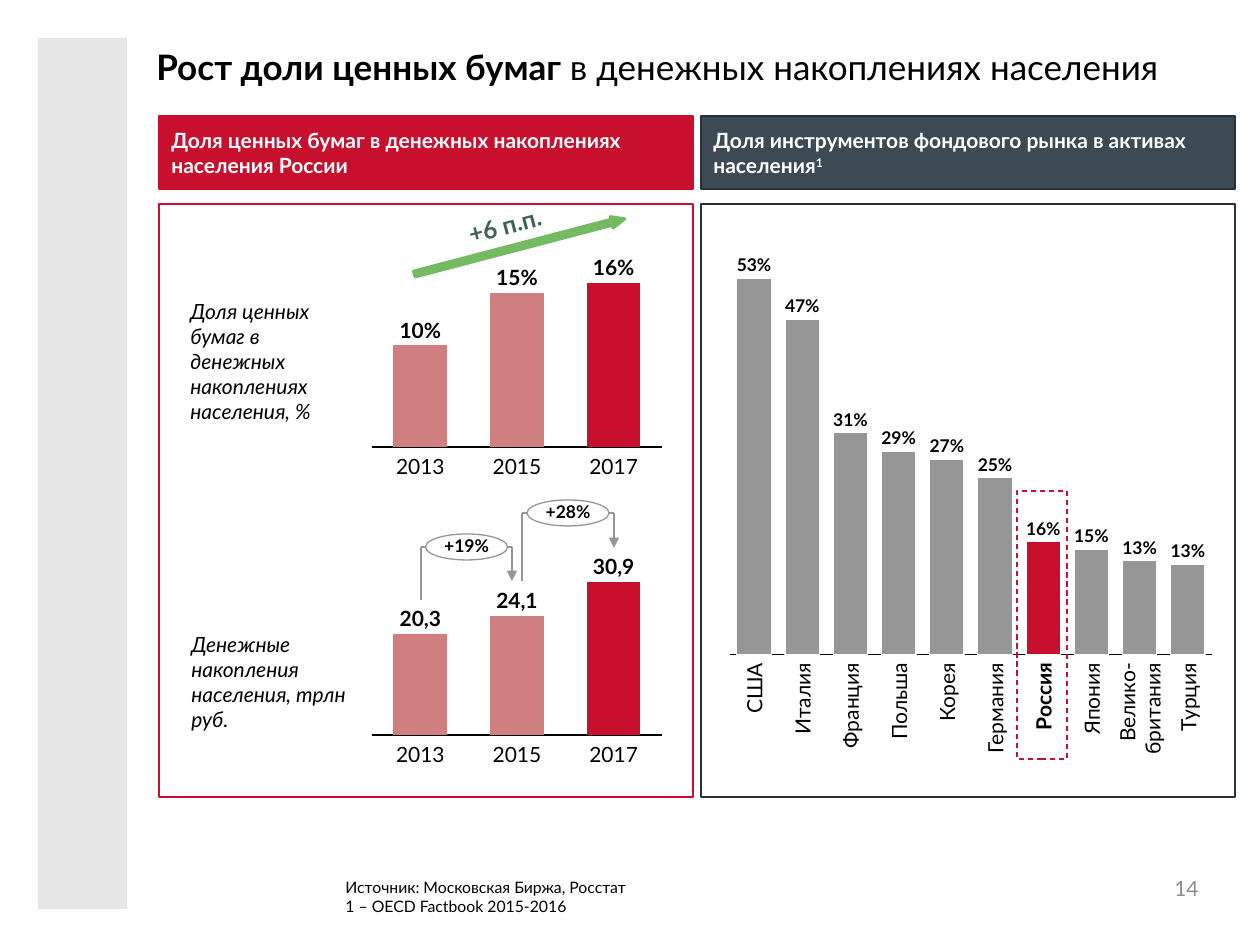
"""Build the slide on the share of securities in household savings."""
from lxml.etree import SubElement
from pptx import Presentation
from pptx.chart.data import CategoryChartData
from pptx.dml.color import RGBColor
from pptx.enum.chart import XL_CHART_TYPE, XL_TICK_LABEL_POSITION, XL_TICK_MARK
from pptx.enum.dml import MSO_LINE
from pptx.enum.shapes import MSO_CONNECTOR, MSO_SHAPE
from pptx.enum.text import MSO_ANCHOR, PP_ALIGN
from pptx.oxml.ns import qn
from pptx.util import Pt

PX = 914400 / 126
FONT = "Lato"
COLORS = {name: RGBColor.from_string(code) for name, code in {
    "black": "000000", "white": "FFFFFF", "band": "E6E6E6", "red": "C8102E",
    "pink": "CF7F7F", "gray": "969696", "slate": "3D4953", "edge": "283138",
    "green": "73BA62", "growth": "406253", "number": "8C8C8C"}.items()}


def at(*lengths):
    return [round(length * PX) for length in lengths]


def write(shape, text, size, color="black", bold=False, italic=False,
          align=PP_ALIGN.LEFT, anchor=MSO_ANCHOR.TOP, inset=None, wrap=True):
    frame = shape.text_frame
    frame.word_wrap = wrap
    frame.vertical_anchor = anchor
    if inset is not None:
        frame.margin_left = frame.margin_right = round(inset * PX)
        frame.margin_top = frame.margin_bottom = 0
    frame.text = text
    for para in frame.paragraphs:
        para.alignment = align
        for span in para.runs:
            span.font.name = FONT
            span.font.size = Pt(size)
            span.font.bold = bold
            span.font.italic = italic
            span.font.color.rgb = COLORS[color]
    return frame


deck = Presentation()
deck.slide_width, deck.slide_height = at(1260, 945)
page = deck.slides.add_slide(deck.slide_layouts[6])
shapes = page.shapes

band = shapes.add_shape(MSO_SHAPE.RECTANGLE, *at(38, 38, 89, 871))
band.shadow.inherit = False
band.fill.solid()
band.fill.fore_color.rgb = COLORS["band"]
band.line.fill.background()

title = write(shapes.add_textbox(*at(144, 39, 1108, 105)), "Рост доли ценных бумаг ", 20, bold=True)
span = title.paragraphs[0].add_run()
span.text = "в денежных накоплениях населения"
span.font.name = FONT
span.font.size = Pt(20)
span.font.color.rgb = COLORS["black"]

panels = [
    (159, "red", "red", "Доля ценных бумаг в денежных накоплениях населения России", ""),
    (701, "slate", "edge", "Доля инструментов фондового рынка в активах населения", "1"),
]
for left, fill, edge, heading, note in panels:
    body = shapes.add_shape(MSO_SHAPE.RECTANGLE, *at(left, 204, 534, 593))
    body.fill.background()
    header = shapes.add_shape(MSO_SHAPE.RECTANGLE, *at(left, 116, 534, 73))
    header.fill.solid()
    header.fill.fore_color.rgb = COLORS[fill]
    for panel in (body, header):
        panel.shadow.inherit = False
        panel.line.color.rgb = COLORS[edge]
        panel.line.width = Pt(0.75)
    para = write(header, heading, 12, "white", bold=True, anchor=MSO_ANCHOR.MIDDLE).paragraphs[0]
    para.space_after = Pt(4.5)
    if note:
        span = para.add_run()
        span.text = note
        span.font.name = FONT
        span.font.size = Pt(12)
        span.font.bold = True
        span.font.color.rgb = COLORS["white"]
        span.font._element.set("baseline", "30000")

years = ["2013", "2015", "2017"]
countries = ["США", "Италия", "Франция", "Польша", "Корея", "Германия", "Россия",
             "Япония", "Велико-\vбритания", "Турция"]
country_lengths = [45, 69, 86, 76, 58, 92, 76, 71, 91, 69]
charts = [
    ((719, 267, 504, 399), 40, "gray", 6, [100, 89, 59, 54, 52, 47, 30, 28, 25, 24],
     ["53%", "47%", "31%", "29%", "27%", "25%", "16%", "15%", "13%", "13%"], countries, 10, (48, 21)),
    ((361, 272, 312, 186), 80, "pink", 2, [62, 94, 100], ["10%", "15%", "16%"], years, 12, (58, 25)),
    ((361, 571, 312, 175), 80, "pink", 2, [66, 78, 100], ["20,3", "24,1", "30,9"], years, 12, (58, 25)),
]
inset = 11
for bounds, gap, color, highlight, values, labels, names, size, (label_width, label_height) in charts:
    left, top, width, height = bounds
    data = CategoryChartData()
    data.categories = [str(number + 1) for number in range(len(values))]
    data.add_series("Series 1", values)
    chart = shapes.add_chart(XL_CHART_TYPE.COLUMN_STACKED, *at(*bounds), data).chart
    chart.has_legend = False
    chart.has_title = False
    chart.font.name = FONT
    chart.font.size = Pt(10)
    chart.font.color.rgb = COLORS["black"]
    value_axis, category_axis = chart.value_axis, chart.category_axis
    value_axis.visible = False
    value_axis.has_major_gridlines = False
    value_axis.minimum_scale, value_axis.maximum_scale = 0, 100
    category_axis.tick_label_position = XL_TICK_LABEL_POSITION.NONE
    category_axis.major_tick_mark = XL_TICK_MARK.NONE
    category_axis.format.line.color.rgb = COLORS["black"]
    category_axis.format.line.width = Pt(0.75)
    plot = chart.plots[0]
    plot.gap_width, plot.overlap, plot.vary_by_categories = gap, 100, False
    series = plot.series[0]
    for part, fill in ((series, color), (series.points[highlight], "red")):
        part.format.fill.solid()
        part.format.fill.fore_color.rgb = COLORS[fill]
        if color == "gray":
            part.format.line.color.rgb = COLORS["white"]
            part.format.line.width = Pt(0.75)
    area = chart._chartSpace.find(".//" + qn("c:plotArea"))
    for old in area.findall(qn("c:layout")):
        area.remove(old)
    layout = SubElement(area, qn("c:layout"))
    area.insert(0, layout)
    manual = SubElement(layout, qn("c:manualLayout"))
    for tag, value in [("layoutTarget", "inner"), ("xMode", "edge"), ("yMode", "edge"),
                       ("x", inset / width), ("y", inset / height),
                       ("w", 1 - 2 * inset / width), ("h", 1 - 2 * inset / height)]:
        SubElement(manual, qn("c:" + tag)).set("val", str(value))

    step = (width - 2 * inset) / len(values)
    base = top + height - inset
    for index, (value, label, name) in enumerate(zip(values, labels, names)):
        center = left + inset + step * (index + 0.5)
        bar_top = base - (height - 2 * inset) * value / 100
        box = shapes.add_textbox(*at(center - label_width / 2, bar_top - label_height - 3,
                                     label_width, label_height))
        write(box, label, size, bold=True, align=PP_ALIGN.CENTER, anchor=MSO_ANCHOR.BOTTOM,
              inset=2, wrap=False)
        if names is years:
            box = shapes.add_textbox(*at(center - 29, base + 7, 58, 25))
            write(box, name, 12, align=PP_ALIGN.CENTER, inset=0, wrap=False)
        else:
            thickness = 50 if "\v" in name else 25
            box = shapes.add_textbox(*at(center - thickness / 2, base + 8, thickness,
                                         country_lengths[index]))
            frame = write(box, name, 12, bold=index == highlight, align=PP_ALIGN.RIGHT,
                          anchor=MSO_ANCHOR.MIDDLE, inset=0, wrap=False)
            frame._txBody.bodyPr.set("vert", "vert270")

frame_russia = shapes.add_shape(MSO_SHAPE.RECTANGLE, *at(1017, 491, 50, 268))
frame_russia.shadow.inherit = False
frame_russia.fill.background()
frame_russia.line.color.rgb = COLORS["red"]
frame_russia.line.width = Pt(0.75)
frame_russia.line.dash_style = MSO_LINE.DASH

for start, end, level, foot, tip, growth in [(421, 512, 547, 600, 581, "+19%"),
                                             (522, 614, 513, 581, 548, "+28%")]:
    corners = [(start, foot), (start, level), (end, level), (end, tip)]
    for begin, finish in zip(corners, corners[1:]):
        line = shapes.add_connector(MSO_CONNECTOR.STRAIGHT, *at(*begin, *finish))
        line.line.color.rgb = COLORS["gray"]
        line.line.width = Pt(1)
        if finish == corners[-1]:
            SubElement(line.line._get_or_add_ln(), qn("a:tailEnd")).set("type", "triangle")
        SubElement(line._element.spPr, qn("a:effectLst"))
    oval = shapes.add_shape(MSO_SHAPE.OVAL, *at((start + end) / 2 - 41, level - 13, 82, 26))
    oval.shadow.inherit = False
    oval.fill.solid()
    oval.fill.fore_color.rgb = COLORS["white"]
    oval.line.color.rgb = COLORS["gray"]
    oval.line.width = Pt(0.75)
    frame = write(oval, growth, 10, bold=True, align=PP_ALIGN.CENTER,
                  anchor=MSO_ANCHOR.MIDDLE, inset=0, wrap=False)
    frame.paragraphs[0].line_spacing = 0.9

for bounds, caption in [
        ((178, 292, 181, 140), "Доля ценных бумаг в денежных накоплениях населения, %"),
        ((179, 625, 181, 115), "Денежные накопления населения, трлн руб.")]:
    write(shapes.add_textbox(*at(*bounds)), caption, 12, italic=True)

arrow = shapes.add_shape(MSO_SHAPE.RIGHT_ARROW, *at(411, 241, 217, 11))
arrow.shadow.inherit = False
arrow.adjustments[0], arrow.adjustments[1] = 0.5, 1.18
arrow.rotation = 345.3
arrow.fill.solid()
arrow.fill.fore_color.rgb = COLORS["green"]
arrow.line.color.rgb = COLORS["green"]
arrow.line.width = Pt(2)
gain = shapes.add_textbox(*at(428, 204, 154, 43))
gain.rotation = 345.4
write(gain, "+6 п.п.", 14, "growth", bold=True, align=PP_ALIGN.CENTER)

write(shapes.add_textbox(*at(333, 872, 357, 50)),
      "Источник: Московская Биржа, Росстат\n1 – OECD Factbook 2015-2016", 9)
write(shapes.add_textbox(*at(917, 863, 294, 50)), "14", 12, "number",
      align=PP_ALIGN.RIGHT, anchor=MSO_ANCHOR.MIDDLE)

deck.save("out.pptx")
